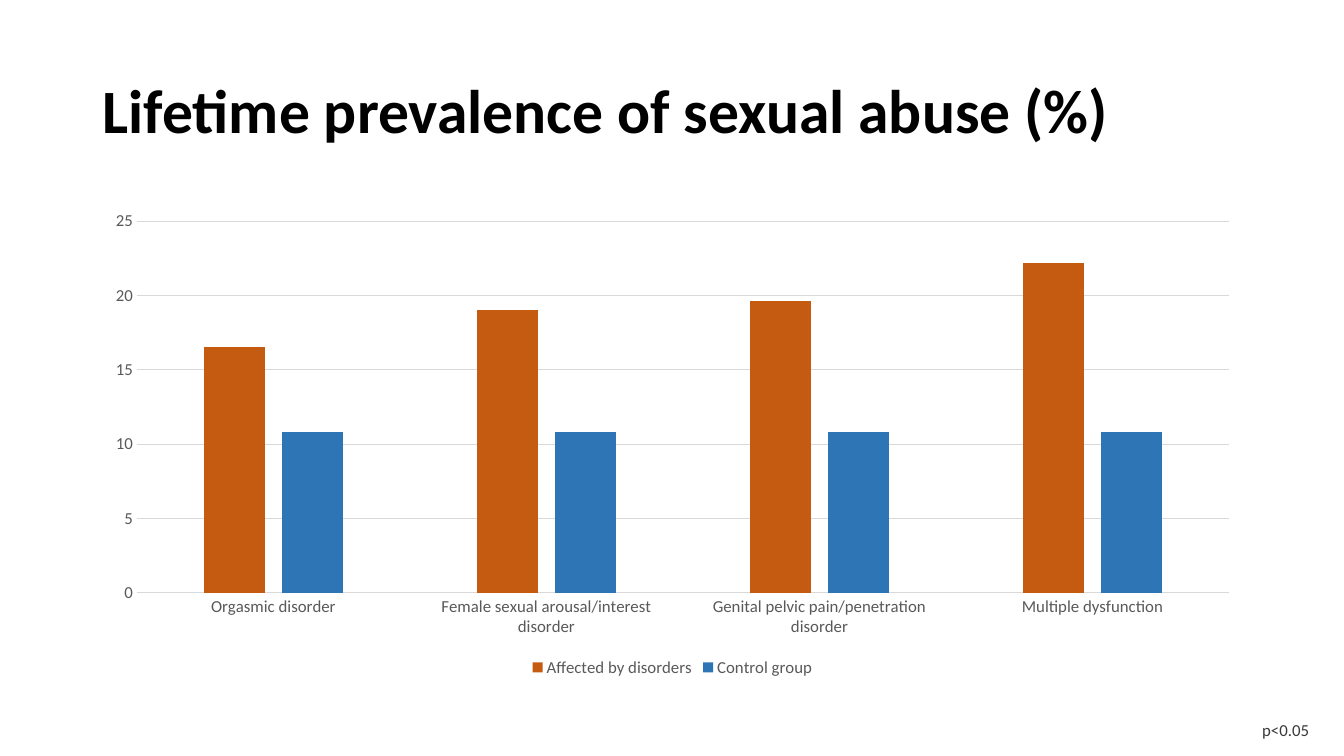
from dataclasses import dataclass

from pptx import Presentation
from pptx.chart.data import CategoryChartData
from pptx.dml.color import RGBColor
from pptx.enum.chart import XL_CHART_TYPE, XL_LEGEND_POSITION, XL_TICK_MARK
from pptx.enum.text import MSO_ANCHOR, MSO_AUTO_SIZE, PP_ALIGN
from pptx.util import Inches, Pt

COLOURS = {
    "title": "000000",
    "label": "595959",
    "rule": "D9D9D9",
    "note": "3B3838",
    "affected": "C55A11",
    "control": "2E75B6",
}
FONT = "Calibri"
WIDTH, HEIGHT = Inches(13.33), Inches(7.5)
CATEGORIES = (
    "Orgasmic disorder",
    "Female sexual arousal/interest disorder",
    "Genital pelvic pain/penetration disorder",
    "Multiple dysfunction",
)


@dataclass(frozen=True)
class Area:
    left: float
    top: float
    width: float
    height: float

    def lengths(self) -> tuple[int, int, int, int]:
        return (
            round(self.left / 100 * WIDTH),
            round(self.top / 100 * HEIGHT),
            round(self.width / 100 * WIDTH),
            round(self.height / 100 * HEIGHT),
        )


@dataclass(frozen=True)
class Group:
    name: str
    colour: str
    values: tuple[float, ...]


TITLE_AREA = Area(6.9, 5.33, 86.27, 19.33)
CHART_AREA = Area(6.9, 26.67, 86.27, 63.47)
NOTE_AREA = Area(93.17, 94.53, 6.83, 4)
GROUPS = (
    Group("Affected by disorders", "affected", (16.5, 19, 19.6, 22.2)),
    Group("Control group", "control", (10.8,) * len(CATEGORIES)),
)


def colour(name: str) -> RGBColor:
    return RGBColor.from_string(COLOURS[name])


def set_values(target, values: dict) -> None:
    for name, value in values.items():
        setattr(target, name, value)


def style_font(font, size: float, colour_name: str, bold: bool = False) -> None:
    set_values(font, {"name": FONT, "size": Pt(size), "bold": bold})
    font.color.rgb = colour(colour_name)


def style_rule(line) -> None:
    line.width = Pt(0.75)
    line.color.rgb = colour("rule")


def add_title(page, text: str) -> None:
    title = page.shapes.title
    places = ("left", "top", "width", "height")
    set_values(title, dict(zip(places, TITLE_AREA.lengths())))
    frame = title.text_frame
    set_values(frame, {"text": text, "vertical_anchor": MSO_ANCHOR.MIDDLE, "word_wrap": True})
    para = frame.paragraphs[0]
    set_values(para, {"alignment": PP_ALIGN.LEFT, "line_spacing": 0.9})
    style_font(para.runs[0].font, 44, "title", bold=True)


def add_prevalence_chart(page) -> None:
    data = CategoryChartData()
    data.categories = CATEGORIES
    for group in GROUPS:
        data.add_series(group.name, group.values)
    frame = page.shapes.add_chart(
        XL_CHART_TYPE.COLUMN_CLUSTERED, *CHART_AREA.lengths(), data
    )
    chart = frame.chart
    set_values(chart, {"has_title": False, "has_legend": True})
    style_font(chart.font, 10, "title")
    set_values(
        chart.legend,
        {"position": XL_LEGEND_POSITION.BOTTOM, "include_in_layout": False},
    )
    style_font(chart.legend.font, 12, "label")

    plot = chart.plots[0]
    set_values(plot, {"gap_width": 219, "overlap": -27, "vary_by_categories": False})
    for series, group in zip(plot.series, GROUPS):
        series.format.fill.solid()
        series.format.fill.fore_color.rgb = colour(group.colour)

    for axis in (chart.category_axis, chart.value_axis):
        set_values(
            axis,
            {"major_tick_mark": XL_TICK_MARK.NONE, "minor_tick_mark": XL_TICK_MARK.NONE},
        )
        style_font(axis.tick_labels.font, 12, "label")
    style_rule(chart.category_axis.format.line)
    set_values(
        chart.value_axis,
        {"minimum_scale": 0, "maximum_scale": 25, "major_unit": 5, "has_major_gridlines": True},
    )
    chart.value_axis.format.line.fill.background()
    style_rule(chart.value_axis.major_gridlines.format.line)


def add_note(page, text: str) -> None:
    box = page.shapes.add_textbox(*NOTE_AREA.lengths())
    frame = box.text_frame
    set_values(
        frame,
        {"text": text, "word_wrap": True, "auto_size": MSO_AUTO_SIZE.SHAPE_TO_FIT_TEXT},
    )
    style_font(frame.paragraphs[0].runs[0].font, 12, "note")


def main() -> None:
    deck = Presentation()
    set_values(deck, {"slide_width": WIDTH, "slide_height": HEIGHT})
    page = deck.slides.add_slide(deck.slide_layouts.get_by_name("Title Only"))
    add_title(page, "Lifetime prevalence of sexual abuse (%)")
    add_prevalence_chart(page)
    add_note(page, "p<0.05")
    deck.save("out.pptx")


if __name__ == "__main__":
    main()
